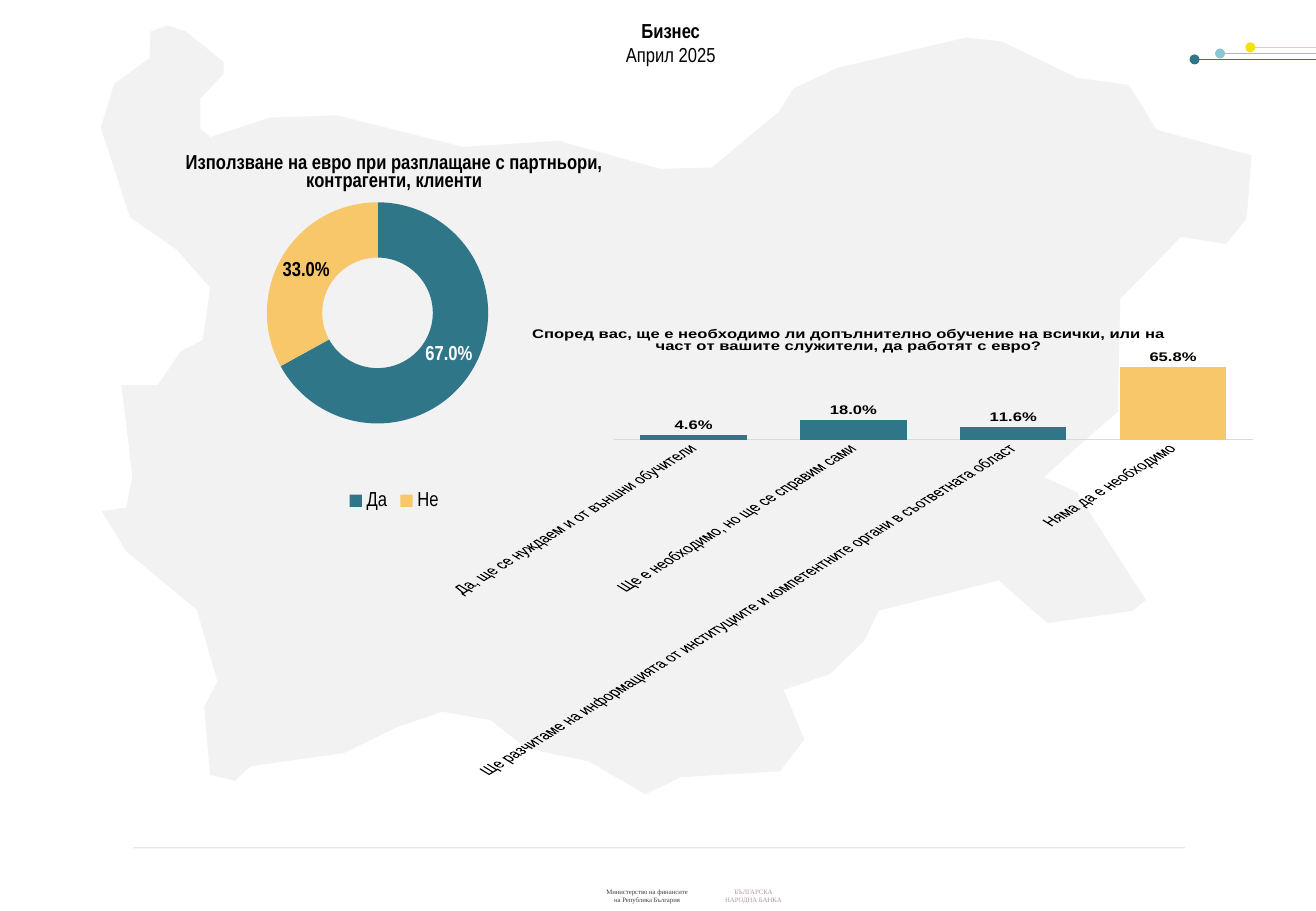
from lxml import etree
from pptx import Presentation, util as u
from pptx.chart.data import CategoryChartData
from pptx.dml.color import RGBColor
from pptx.enum import chart as ch, shapes, text
from pptx.oxml import parse_xml
from pptx.oxml.ns import nsdecls, qn

TEAL = RGBColor(0x30, 0x76, 0x89)
AQUA = RGBColor(0x8A, 0xC7, 0xD3)
YELLOW = RGBColor(0xF2, 0xE4, 0x04)
AMBER = RGBColor(0xF7, 0xC7, 0x6A)
MAP_GREY = RGBColor(0xF2, 0xF2, 0xF2)
RULE_GREY = RGBColor(0xA6, 0xA6, 0xA6)
AXIS_GREY = RGBColor(0xD9, 0xD9, 0xD9)
DARK = RGBColor(0x40, 0x40, 0x40)
ROSE = RGBColor(0xAF, 0x9A, 0x9A)
BLACK = RGBColor(0, 0, 0)
WHITE = RGBColor(0xFF, 0xFF, 0xFF)
NARROW, SERIF = "Arial Narrow", "Times New Roman"

# Content; boxes are left, top, width, height in percent of the slide
HEADING = [("Бизнес", True), ("Април 2025", False)]
HEADING_BOX = (46.54, 1.33, 8.86, 6.67)
EURO_USE = dict(
    title="Използване на евро при разплащане с партньори, контрагенти, клиенти",
    series="Series 1", box=(8.86, 14.67, 42.2, 41.87),
    values={"Да": 0.67, "Не": 0.33}, colors=[TEAL, AMBER])
QUESTION = ("Според вас, ще е необходимо ли допълнително обучение на всички, "
            "или на част от вашите служители, да работят с евро?")
TRAINING = dict(
    title=QUESTION, series=QUESTION, box=(32.5, 34.67, 63.99, 50.67),
    values={
        "Да, ще се нуждаем и от външни обучители": 0.046,
        "Ще е необходимо, но ще се справим сами": 0.18,
        "Ще разчитаме на информацията от институциите и "
        "компетентните органи в съответната област": 0.116,
        "Няма да е необходимо": 0.658},
    colors=[TEAL, TEAL, TEAL, AMBER])
FOOTERS = [
    ("Министерство на финансите на Република България", DARK, (44.97, 96.8, 8.4, 3.2)),
    ("БЪЛГАРСКА НАРОДНА БАНКА", ROSE, (54.02, 96.8, 6.46, 3.2))]
# Rules: left, right, height on the slide, colour, round start
RULES = [(90.77, 100, 6.53, TEAL, True), (95.01, 100, 5.2, YELLOW, True),
         (92.71, 100, 5.87, AQUA, True), (10.16, 90.03, 93.07, RULE_GREY, False)]
# Country outline, in hundredths of an inch
OUTLINE = [
    (124, 26), (138, 21), (153, 26), (184, 51), (184, 61), (165, 81), (165, 106),
    (173, 113), (222, 97), (277, 95), (381, 121), (460, 116), (543, 139), (586, 138),
    (641, 92), (653, 73), (689, 56), (795, 31), (824, 34), (886, 64), (929, 70),
    (952, 107), (1030, 128), (1026, 180), (1009, 201), (972, 195), (922, 246),
    (920, 339), (899, 357), (859, 393), (886, 405), (943, 494), (932, 503), (862, 513),
    (822, 478), (723, 503), (711, 528), (683, 555), (645, 568), (662, 609), (642, 635),
    (560, 640), (531, 654), (485, 627), (433, 616), (404, 593), (364, 586), (326, 599),
    (283, 620), (206, 631), (193, 643), (173, 638), (168, 582), (179, 561), (162, 502),
    (104, 454), (84, 421), (104, 418), (109, 392), (100, 317), (130, 317), (149, 289),
    (167, 280), (173, 237), (146, 206), (107, 179), (83, 105), (94, 69), (123, 48)]

prs = Presentation()
prs.slide_width, prs.slide_height = u.Inches(10.83), u.Inches(7.5)
s = prs.slides.add_slide(prs.slide_layouts[5])


def place(left, top, width, height):
    w, h = prs.slide_width / 100, prs.slide_height / 100
    return [u.Emu(round(v)) for v in (left * w, top * h, width * w, height * h)]


def style(font, size, color=BLACK, bold=False, name=NARROW):
    font.size, font.bold, font.name = u.Pt(size), bold, name
    font.color.rgb = color


def add_chart(kind, data):
    cd = CategoryChartData(number_format="0.0%")
    cd.categories = list(data["values"])
    cd.add_series(data["series"], list(data["values"].values()))
    chart = s.shapes.add_chart(kind, *place(*data["box"]), cd).chart
    style(chart.font, 12)
    chart.has_title = True
    tf = chart.chart_title.text_frame
    tf.text = data["title"]
    style(tf.paragraphs[0].runs[0].font, 12, bold=True)
    chart.chart_title.include_in_layout = False
    plot = chart.plots[0]
    plot.has_data_labels = False
    series = plot.series[0]
    for i, color in enumerate(data["colors"]):
        fill = series.points[i].format.fill
        fill.solid()
        fill.fore_color.rgb = color
    labels = series.data_labels
    labels.show_value = True
    labels.number_format, labels.number_format_is_linked = "0.0%", False
    style(labels.font, 12, bold=True)
    return chart, plot, series


# Rules with round starts
for left, right, level, color, dot in RULES:
    x, y, w, _ = place(left, level, right - left, 0)
    rule = s.shapes.add_connector(shapes.MSO_CONNECTOR.STRAIGHT, x, y, x + w, y)
    rule.line.width, rule.line.color.rgb = u.Pt(0.25), color
    spPr = rule.element.spPr
    if dot:
        etree.SubElement(spPr.find(qn("a:ln")), qn("a:headEnd"), type="oval")
    else:
        etree.SubElement(spPr.find(".//" + qn("a:srgbClr")), qn("a:alpha"), val="74000")
    etree.SubElement(spPr, qn("a:effectLst"))

# Country outline
fb = s.shapes.build_freeform(*OUTLINE[0], scale=u.Inches(1) / 100)
fb.add_line_segments(OUTLINE[1:], close=True)
country = fb.convert_to_shape()
country.shadow.inherit = False
country.fill.solid()
country.fill.fore_color.rgb = MAP_GREY
country.line.fill.background()

# Institutions
for name, color, box in FOOTERS:
    tf = s.shapes.add_textbox(*place(*box)).text_frame
    tf.word_wrap = True
    tf.text = name
    p = tf.paragraphs[0]
    p.alignment = text.PP_ALIGN.CENTER
    style(p.runs[0].font, 4, color, name=SERIF)

# Use of the euro
chart, plot, series = add_chart(ch.XL_CHART_TYPE.DOUGHNUT, EURO_USE)
plot.vary_by_categories = True
chart.has_legend = True
chart.legend.position = ch.XL_LEGEND_POSITION.BOTTOM
chart.legend.include_in_layout = False
style(chart.legend.font, 12)
style(series.points[0].data_label.font, 12, WHITE, bold=True)
area = chart.element.find(".//" + qn("c:plotArea")) if hasattr(chart, "element") \
    else chart._chartSpace.chart.plotArea
for old in area.findall(qn("c:layout")):
    area.remove(old)
sizes = "".join(f'<c:{k} val="{v}"/>' for k, v in
                [("x", 0.27), ("y", 0.18), ("w", 0.4), ("h", 0.58)])
area.insert(0, parse_xml(
    f'<c:layout {nsdecls("c")}><c:manualLayout><c:layoutTarget val="inner"/>'
    f'<c:xMode val="edge"/><c:yMode val="edge"/>{sizes}</c:manualLayout></c:layout>'))

# Need for training
chart, plot, series = add_chart(ch.XL_CHART_TYPE.COLUMN_CLUSTERED, TRAINING)
plot.vary_by_categories = False
plot.gap_width, plot.overlap = 50, -27
chart.has_legend = False
series.data_labels.position = ch.XL_LABEL_POSITION.OUTSIDE_END
chart.value_axis.visible = False
chart.value_axis.has_major_gridlines = False
axis = chart.category_axis
axis.major_tick_mark = ch.XL_TICK_MARK.NONE
axis.format.line.width, axis.format.line.color.rgb = u.Pt(0.75), AXIS_GREY
style(axis.tick_labels.font, 12)
axis._element.txPr.find(qn("a:bodyPr")).set("rot", "-2700000")

# Heading, in front of the map
title = s.shapes.title
title.left, title.top, title.width, title.height = place(*HEADING_BOX)
s.shapes.element.append(title.element)
tf = title.text_frame
tf.text = "\n".join(line for line, _ in HEADING)
tf.word_wrap, tf.vertical_anchor = False, text.MSO_ANCHOR.TOP
tf.auto_size = text.MSO_AUTO_SIZE.SHAPE_TO_FIT_TEXT
for p, (_, bold) in zip(tf.paragraphs, HEADING):
    p.alignment = text.PP_ALIGN.CENTER
    style(p.runs[0].font, 12, bold=bold)

prs.save("out.pptx")
